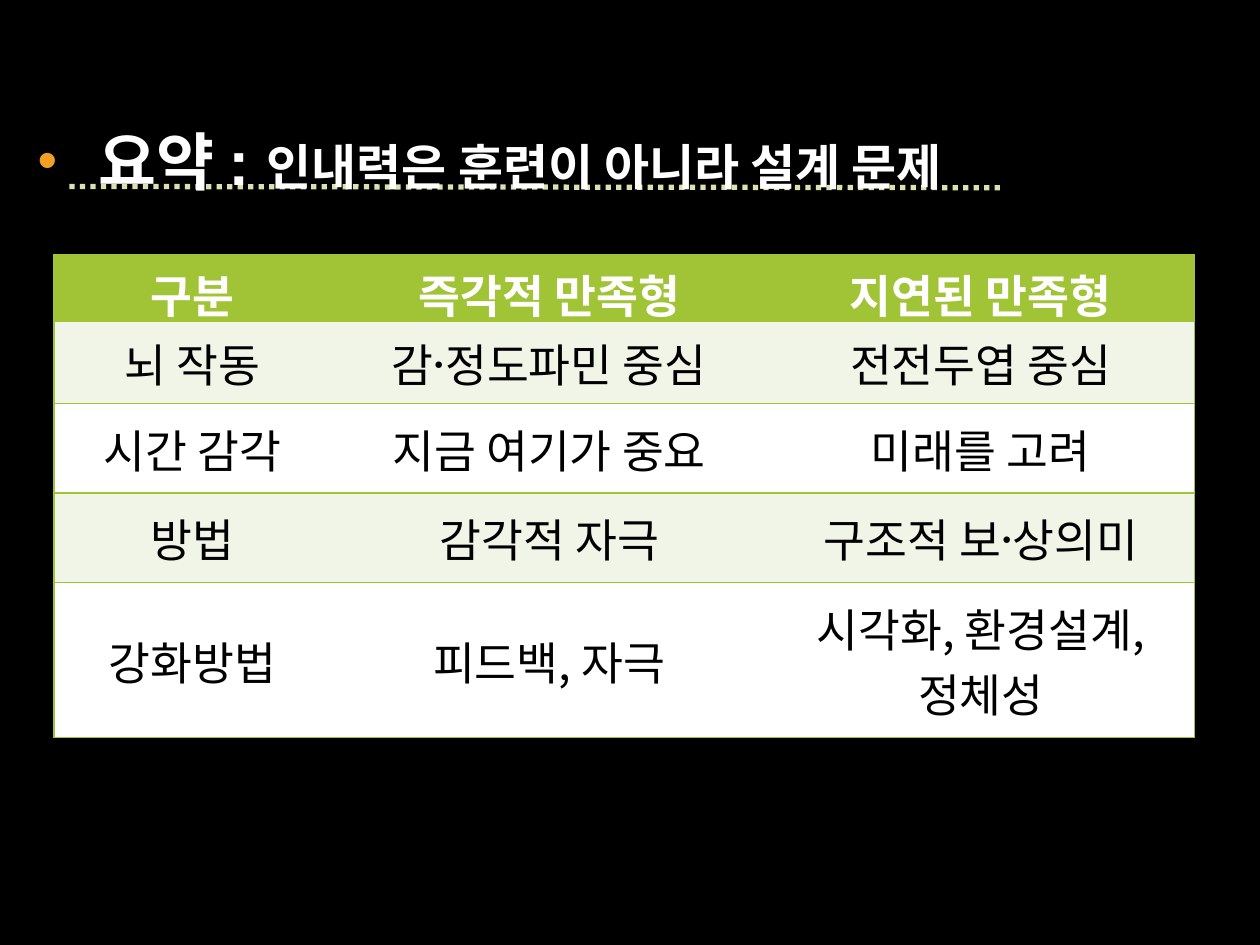
from lxml import etree
from pptx import Presentation
from pptx.dml.color import RGBColor
from pptx.enum.dml import MSO_LINE
from pptx.enum.shapes import MSO_CONNECTOR
from pptx.enum.text import MSO_ANCHOR, PP_ALIGN
from pptx.oxml import parse_xml
from pptx.oxml.ns import nsdecls, qn
from pptx.util import Inches, Pt

STRAIGHT = MSO_CONNECTOR.STRAIGHT
DOTTED = MSO_LINE.ROUND_DOT
CENTER = PP_ALIGN.CENTER
MIDDLE = MSO_ANCHOR.MIDDLE

THEME = {
    "background": "000000",
    "rule": "DDE0AF",
    "bullet": "F29F26",
    "accent": "A0C435",
    "bands": ["FFFFFF", "F0F5E8"],
    "light": "FFFFFF",
    "dark": "000000",
    "latin": "Arial",
    "korean": "Noto Sans CJK KR",
    "title_sizes": [32, 36, 28],
    "table_size": 26,
}


def add_text(paragraph, text, color, **formats):
    run = paragraph.add_run()
    run.text = text
    for name, value in formats.items():
        setattr(run.font, name, value)
    run.font.color.rgb = RGBColor.from_string(color)
    east_asian = etree.SubElement(run.font._element, qn("a:ea"))
    east_asian.set("typeface", THEME["korean"])


def set_borders(cell, visible_sides):
    properties = cell._tc.get_or_add_tcPr()
    for position, side in enumerate("LRTB"):
        paint = "<a:noFill/>"
        if side in visible_sides:
            paint = f'<a:solidFill><a:srgbClr val="{THEME["accent"]}"/></a:solidFill>'
        border = parse_xml(f'<a:ln{side} {nsdecls("a")} w="{Pt(1)}">{paint}</a:ln{side}>')
        properties.insert(position, border)


prs = Presentation()
prs.slide_width, prs.slide_height = Inches(10), Inches(7.5)
slide = prs.slides.add_slide(prs.slide_layouts[6])
slide.background.fill.solid()
slide.background.fill.fore_color.rgb = RGBColor.from_string(THEME["background"])

title_rule = slide.shapes.add_connector(
    STRAIGHT, Inches(0.55), Inches(1.48), Inches(7.97), Inches(1.49))
title_rule.line.color.rgb = RGBColor.from_string(THEME["rule"])
for name, value in {"width": Pt(3), "dash_style": DOTTED}.items():
    setattr(title_rule.line, name, value)
etree.SubElement(title_rule._element.spPr, qn("a:effectLst"))

summary = slide.shapes.add_textbox(Inches(0.2), Inches(0.92), Inches(9.61), Inches(6.46))
summary.text_frame.word_wrap = True
headline = summary.text_frame.paragraphs[0]
headline_format = headline._p.get_or_add_pPr()
for name, value in {"marL": Inches(0.38), "indent": -Inches(0.38)}.items():
    headline_format.set(name, str(value))
for markup in [
    '<a:spcBef {}><a:spcPct val="20000"/></a:spcBef>',
    '<a:buClr {}><a:srgbClr val="' + THEME["bullet"] + '"/></a:buClr>',
    '<a:buFont {} typeface="' + THEME["latin"] + '"/>',
    '<a:buChar {} char="•"/>',
]:
    headline_format.append(parse_xml(markup.format(nsdecls("a"))))
headline_parts = [" ", "요약 : ", "인내력은 훈련이 아니라 설계 문제"]
for part, size in zip(headline_parts, THEME["title_sizes"]):
    add_text(headline, part, THEME["light"], size=Pt(size), bold=True, name=THEME["latin"])

comparison = [
    ["구분", "즉각적 만족형", "지연된 만족형"],
    ["뇌 작동", "감정〮도파민 중심", "전전두엽 중심"],
    ["시간 감각", "지금 여기가 중요", "미래를 고려"],
    ["방법", "감각적 자극", "구조적 보상〮의미"],
    ["강화방법", "피드백, 자극", "시각화, 환경설계, 정체성"],
]
column_widths = [2.2, 3.46, 3.39]
row_heights = [0.44, 0.65, 0.71, 0.71, 1.23]
comparison_table = slide.shapes.add_table(
    len(row_heights), len(column_widths),
    Inches(0.43), Inches(2.02), Inches(9.06), Inches(3.83)).table
for column, width in zip(comparison_table.columns, column_widths):
    column.width = Inches(width)
for row, height in zip(comparison_table.rows, row_heights):
    row.height = Inches(height)

outer_sides = ["L", "", "R"]
for row_index, entries in enumerate(comparison):
    is_header = row_index == 0
    fill_color = THEME["accent"] if is_header else THEME["bands"][row_index % 2]
    text_color = THEME["light"] if is_header else THEME["dark"]
    text_format = {
        "size": Pt(THEME["table_size"]),
        "bold": is_header,
        "name": THEME["latin"] if is_header else THEME["korean"],
    }
    for column_index, entry in enumerate(entries):
        cell = comparison_table.cell(row_index, column_index)
        cell.vertical_anchor = MIDDLE
        cell.fill.solid()
        cell.fill.fore_color.rgb = RGBColor.from_string(fill_color)
        set_borders(cell, "TB" + outer_sides[column_index])
        paragraph = cell.text_frame.paragraphs[0]
        paragraph.alignment = CENTER
        add_text(paragraph, entry, text_color, **text_format)

prs.save("out.pptx")
